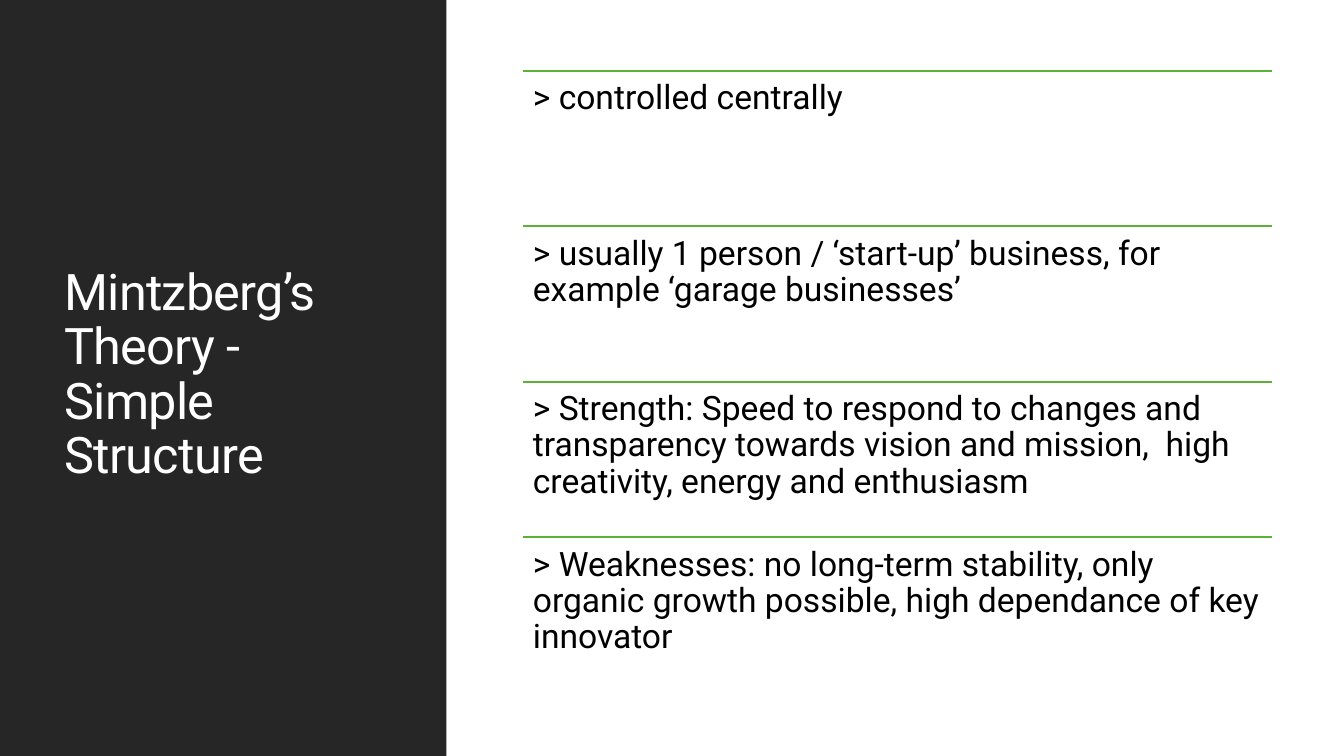
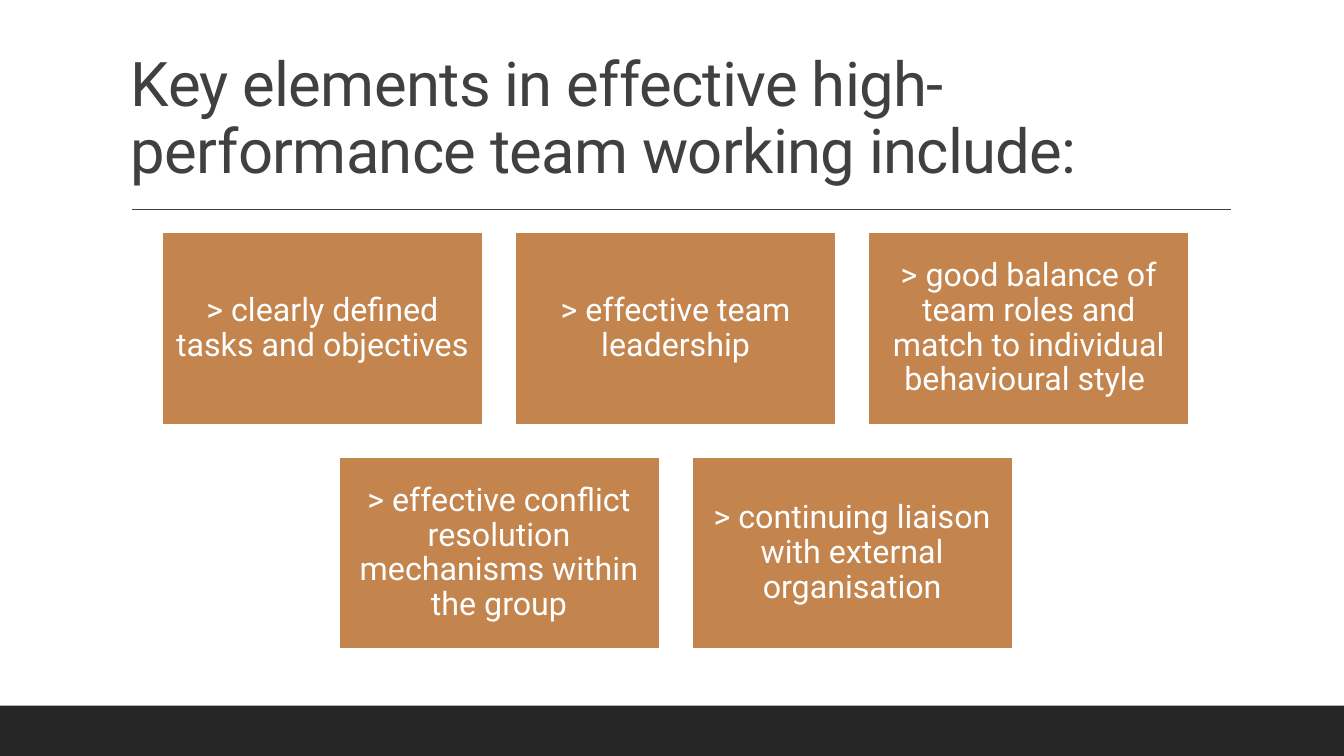
from dataclasses import dataclass

from lxml.etree import SubElement
from pptx import Presentation
from pptx.dml.color import RGBColor
from pptx.enum.shapes import MSO_CONNECTOR, MSO_SHAPE
from pptx.enum.text import MSO_ANCHOR as ANCHOR, MSO_AUTO_SIZE as FIT, PP_ALIGN as ALIGN
from pptx.oxml.ns import qn
from pptx.shapes.base import BaseShape
from pptx.slide import Slide
from pptx.util import Cm, Pt

WHITE = RGBColor(0xFF, 0xFF, 0xFF)
BLACK = RGBColor(0x00, 0x00, 0x00)
DARK = RGBColor(0x26, 0x26, 0x26)
GREY = RGBColor(0x40, 0x40, 0x40)
GREEN = RGBColor(0x5C, 0xB1, 0x3B)
COPPER = RGBColor(0xC3, 0x84, 0x4D)

FONT = "Roboto"
SLIDE_W, SLIDE_H = 33.87, 19.05
BAND_H = 1.27
INSET = 0.25
TITLE_SPACING = "-50"

STRUCTURE_POINTS = [
    "> controlled centrally",
    "> usually 1 person / ‘start-up’ business, for example ‘garage businesses’",
    "> Strength: Speed to respond to changes and transparency towards vision "
    "and mission,  high creativity, energy and enthusiasm",
    "> Weaknesses: no long-term stability, only organic growth possible, "
    "high dependance of key innovator",
]
TEAM_ROWS = [
    ["> clearly defined tasks and objectives",
     "> effective team leadership",
     "> good balance of team roles and match to individual behavioural style "],
    ["> effective conflict resolution mechanisms within the group",
     "> continuing liaison with external organisation"],
]


@dataclass(frozen=True)
class Box:
    """A rectangle in centimetres."""
    left: float
    top: float
    width: float
    height: float

    def lengths(self) -> tuple[Cm, Cm, Cm, Cm]:
        return Cm(self.left), Cm(self.top), Cm(self.width), Cm(self.height)


@dataclass(frozen=True)
class TextStyle:
    size: float
    color: RGBColor
    anchor: ANCHOR = ANCHOR.TOP
    align: ALIGN = ALIGN.LEFT
    inset_x: float = INSET
    inset_y: float = INSET


SIDE_TITLE = TextStyle(36, WHITE, ANCHOR.MIDDLE, inset_y=0.13)
TOP_TITLE = TextStyle(44, GREY, ANCHOR.BOTTOM, inset_y=0.13)
POINT = TextStyle(24, BLACK)
CARD = TextStyle(23, WHITE, ANCHOR.MIDDLE, ALIGN.CENTER)


def write(sp: BaseShape, text: str, style: TextStyle) -> None:
    tf = sp.text_frame
    frame_format = {
        "word_wrap": True,
        "auto_size": FIT.NONE,
        "vertical_anchor": style.anchor,
        "margin_left": Cm(style.inset_x),
        "margin_right": Cm(style.inset_x),
        "margin_top": Cm(style.inset_y),
        "margin_bottom": Cm(style.inset_y),
    }
    p = tf.paragraphs[0]
    r = p.add_run()
    r.text = text
    r.font.color.rgb = style.color
    formats = [
        (tf, frame_format),
        (p, {"alignment": style.align, "line_spacing": 0.9}),
        (r.font, {"name": FONT, "size": Pt(style.size)}),
    ]
    for target, values in formats:
        for name, value in values.items():
            setattr(target, name, value)


def add_rect(s: Slide, box: Box, fill: RGBColor, outline: RGBColor | None = None) -> BaseShape:
    sp = s.shapes.add_shape(MSO_SHAPE.RECTANGLE, *box.lengths())
    sp.shadow.inherit = False
    sp.fill.solid()
    sp.fill.fore_color.rgb = fill
    if outline is None:
        sp.line.fill.background()
    else:
        sp.line.color.rgb = outline
        sp.line.width = Pt(1.25)
    return sp


def add_rule(s: Slide, left: float, top: float, width: float,
             color: RGBColor, weight: float) -> None:
    line = s.shapes.add_connector(
        MSO_CONNECTOR.STRAIGHT, Cm(left), Cm(top), Cm(left + width), Cm(top))
    line.line.color.rgb = color
    line.line.width = Pt(weight)
    SubElement(line._element.spPr, qn("a:effectLst"))


def add_titled_slide(prs: Presentation, title: str, title_box: Box,
                     style: TextStyle, band: Box) -> Slide:
    """Add a slide with a dark band and its title in front of the band."""
    s = prs.slides.add_slide(prs.slide_layouts[5])
    sp = s.shapes.title
    add_rect(s, band, DARK)
    s.shapes._spTree.append(sp._element)
    sp.left, sp.top, sp.width, sp.height = title_box.lengths()
    write(sp, title, style)
    sp.text_frame.paragraphs[0].runs[0].font._element.set("spc", TITLE_SPACING)
    return s


def build_structure_slide(prs: Presentation) -> None:
    s = add_titled_slide(
        prs, "Mintzberg’s Theory - Simple Structure",
        Box(1.37, 1.45, 8.56, 16.03), SIDE_TITLE, Box(0, 0, 11.25, SLIDE_H))
    left, top, width, row_h = 13.18, 1.78, 18.87, 3.92
    for i, text in enumerate(STRUCTURE_POINTS):
        row = Box(left, top + i * row_h, width, row_h)
        add_rule(s, row.left, row.top, row.width, GREEN, 1.25)
        write(s.shapes.add_textbox(*row.lengths()), text, POINT)


def build_team_slide(prs: Presentation) -> None:
    s = add_titled_slide(
        prs, "Key elements in effective high-performance team working include:",
        Box(3.05, 0.79, 27.94, 4.04), TOP_TITLE,
        Box(0, SLIDE_H - BAND_H, SLIDE_W, BAND_H))
    add_rule(s, 3.33, 5.28, 27.68, GREY, 1)
    card_w, card_h, gap = 8.09, 4.85, 0.81
    center, top = 17.03, 5.85
    for i, texts in enumerate(TEAM_ROWS):
        row_w = len(texts) * (card_w + gap) - gap
        for j, text in enumerate(texts):
            card = Box(center - row_w / 2 + j * (card_w + gap),
                       top + i * (card_h + gap), card_w, card_h)
            write(add_rect(s, card, COPPER, WHITE), text, CARD)


def main() -> None:
    prs = Presentation()
    prs.slide_width, prs.slide_height = Cm(SLIDE_W), Cm(SLIDE_H)
    build_structure_slide(prs)
    build_team_slide(prs)
    prs.save("out.pptx")


if __name__ == "__main__":
    main()
